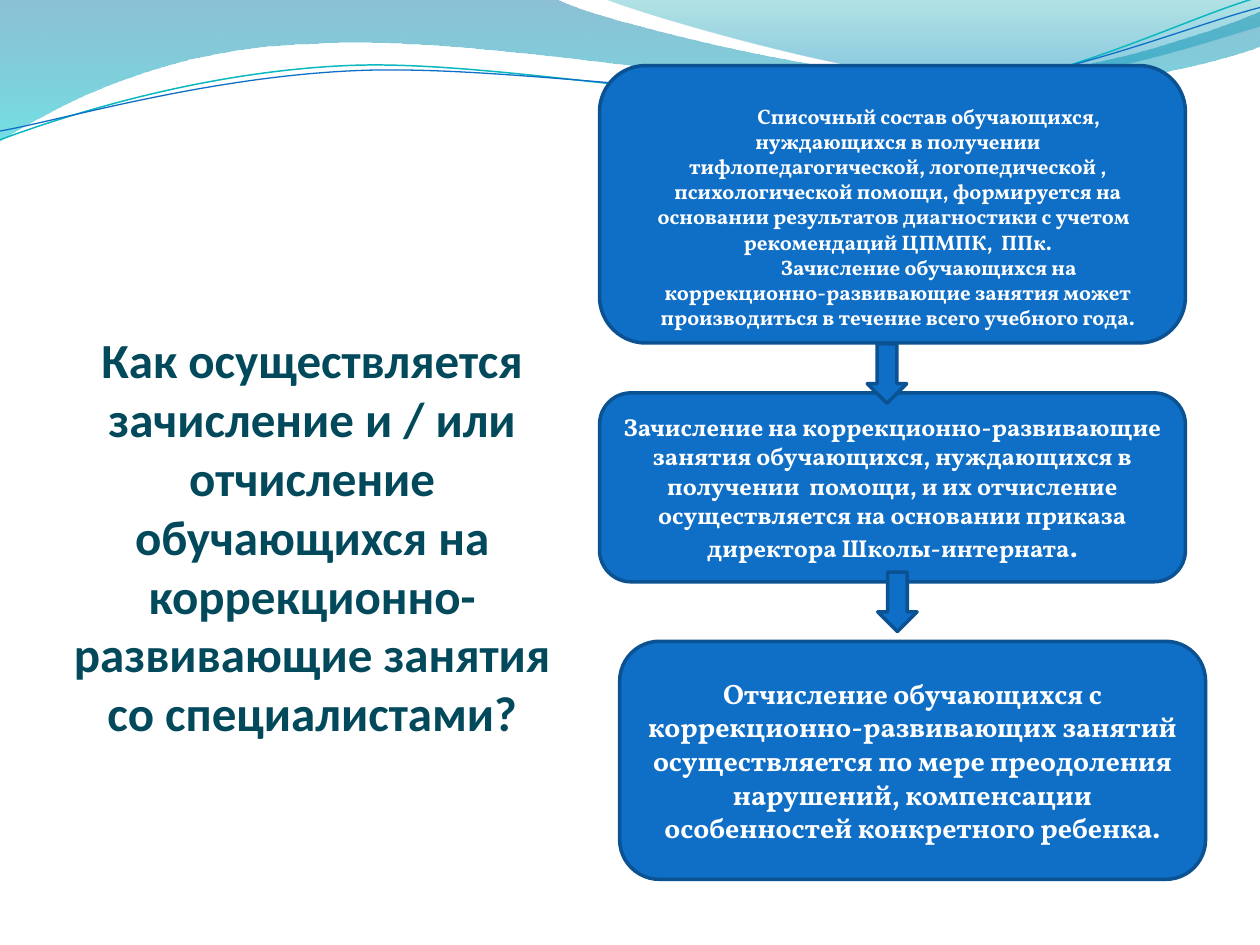
from lxml import etree
from pptx import Presentation
from pptx.dml.color import RGBColor
from pptx.enum.shapes import MSO_SHAPE
from pptx.enum.text import MSO_ANCHOR, MSO_AUTO_SIZE, PP_ALIGN
from pptx.oxml.ns import qn
from pptx.util import Pt

ROUNDED = MSO_SHAPE.ROUNDED_RECTANGLE
DOWN_ARROW = MSO_SHAPE.DOWN_ARROW
CENTER = PP_ALIGN.CENTER
TOP, MIDDLE = MSO_ANCHOR.TOP, MSO_ANCHOR.MIDDLE
NO_AUTOFIT = MSO_AUTO_SIZE.NONE
TITLE_ONLY = 5
LINE_TILT = 357.3

COLORS = {
    "title": "03495C", "white": "FFFFFF", "card": "0F6FC6", "border": "0B5292",
    "aqua": "0AB8BF", "deep": "0074A1", "cyan": "00C6CF",
    "teal": "00A1A9", "sky": "008BBF",
}

# Each path starts at a point; 2 numbers are a line, 6 a cubic curve.
# Gradient stops are (position, colour, opacity percent).
WAVES = [
    ([(0, 0), (317, -1), (343, 12, 478, 45, 546, 45), (614, 45, 690, 19, 720, 6.5),
      (721, 26), (708, 32, 626, 55, 537, 54), (448, 54, 275, 20, 185, 24.5),
      (93, 26, 33, 60, -1, 81), (0, 0)],
     [(0, "deep", 45), (1, "cyan", 55)]),
    ([(345, -1), (366, 8, 491, 45, 554, 47), (616, 50, 692, 23, 720, 15), (720, 0),
      (345, -1)],
     [(0, "teal", 30), (0.8, "sky", 45)]),
]
WAVE_LINES = [
    ([(-1.4, 62.9), (33.8, 51.7, 114.1, 29.4, 199.8, 29.9),
      (284.8, 30.3, 425.9, 67.3, 512.5, 64.8),
      (599.1, 62.4, 676.5, 25.7, 720.2, 15.6)], "aqua", 0.85),
    ([(-1.1, 57.9), (32.9, 53.7, 118.3, 32.5, 204.1, 33),
      (290.6, 33.4, 428.9, 63.8, 515.5, 61.4),
      (601.4, 59.6, 678.4, 30.1, 721.4, 21.3)], "card", 0.75),
]

QUESTION = ("Как осуществляется зачисление и / или отчисление обучающихся на "
            "коррекционно-развивающие занятия со специалистами?")
LIST_RULES = [
    "Списочный состав обучающихся, нуждающихся в получении тифлопедагогической, "
    "логопедической , психологической помощи, формируется на основании результатов "
    "диагностики с учетом   рекомендаций ЦПМПК,  ППк.",
    "Зачисление обучающихся на коррекционно-развивающие занятия может производиться "
    "в течение всего учебного года.",
]
ORDER_RULE = ("Зачисление на коррекционно-развивающие занятия обучающихся, нуждающихся в "
              "получении  помощи, и их отчисление осуществляется на основании приказа "
              "директора Школы-интерната")
LEAVING_RULE = ("Отчисление обучающихся с коррекционно-развивающих занятий осуществляется "
                "по мере преодоления нарушений, компенсации особенностей конкретного ребенка.")


def rgb(name):
    return RGBColor.from_string(COLORS[name])


def set_values(target, values):
    for name, value in values.items():
        setattr(target, name, value)


def add_outline(slide, segments, closed):
    """Draw all points as lines, then join each curve's three points into one cubic."""
    start, *rest = segments
    points = [(Pt(segment[i]), Pt(segment[i + 1]))
              for segment in rest for i in range(0, len(segment), 2)]
    builder = slide.shapes.build_freeform(Pt(start[0]), Pt(start[1]))
    builder.add_line_segments(points, close=closed)
    shape = builder.convert_to_shape()
    shape.shadow.inherit = False
    lines = iter(list(shape.element.iter(qn("a:lnTo"))))
    for segment in rest:
        steps = [next(lines) for _ in range(len(segment) // 2)]
        if len(steps) == 3:
            curve = etree.Element(qn("a:cubicBezTo"))
            steps[0].addprevious(curve)
            for step in steps:
                curve.append(step[0])
                step.getparent().remove(step)
    return shape


def add_waves(slide):
    for segments, stops in WAVES:
        shape = add_outline(slide, segments, True)
        shape.line.fill.background()
        shape.fill.gradient()
        shape.fill.gradient_angle = 270
        for stop, (position, color, _) in zip(shape.fill.gradient_stops, stops):
            stop.position = position
            stop.color.rgb = rgb(color)
        for element, (_, _, opacity) in zip(shape.element.iter(qn("a:srgbClr")), stops):
            etree.SubElement(element, qn("a:alpha")).set("val", str(opacity * 1000))
    for segments, color, width in WAVE_LINES:
        shape = add_outline(slide, segments, False)
        shape.rotation = LINE_TILT
        shape.fill.background()
        shape.line.color.rgb = rgb(color)
        shape.line.width = Pt(width)


def write(shape, paragraphs, font, color, anchor=MIDDLE, indent=0, top_margin=3.6):
    """Fill a shape with centred bold paragraphs, each a list of (text, size)."""
    frame = shape.text_frame
    set_values(frame, {"word_wrap": True, "auto_size": NO_AUTOFIT,
                       "vertical_anchor": anchor, "margin_top": Pt(top_margin)})
    for index, runs in enumerate(paragraphs):
        paragraph = frame.add_paragraph() if index else frame.paragraphs[0]
        paragraph.alignment = CENTER
        if indent:
            paragraph._p.get_or_add_pPr().set("indent", str(Pt(indent)))
        for text, size in runs:
            run = paragraph.add_run()
            run.text = text
            set_values(run.font, {"name": font, "size": Pt(size), "bold": True})
            run.font.color.rgb = rgb(color)


def add_block(slide, kind, left, top, width, height):
    shape = slide.shapes.add_shape(kind, Pt(left), Pt(top), Pt(width), Pt(height))
    shape.shadow.inherit = False
    shape.fill.solid()
    shape.fill.fore_color.rgb = rgb("card")
    shape.line.color.rgb = rgb("border")
    shape.line.width = Pt(2)
    return shape


def add_question(slide, left, top, width, height):
    title = slide.shapes.title
    set_values(title, {"left": Pt(left), "top": Pt(top),
                       "width": Pt(width), "height": Pt(height)})
    write(title, [[(QUESTION, 28)]], "Calibri", "title", TOP)


def add_steps(slide, left, top, width):
    """Stack three cards joined by block arrows."""
    leaving = add_block(slide, ROUNDED, left + 11.5, top + 329, width, 136)
    write(leaving, [[(LEAVING_RULE, 16)]], "Vollkorn", "white")
    order = add_block(slide, ROUNDED, left, top + 187, width, 108)
    write(order, [[(ORDER_RULE, 14), (".", 16)]], "Vollkorn", "white")
    add_block(slide, DOWN_ARROW, left + 159, top + 289.4, 22.5, 34)
    add_block(slide, ROUNDED, left, top, width, 158.5)
    add_block(slide, DOWN_ARROW, left + 153, top + 159, 22.5, 34)
    rules = slide.shapes.add_textbox(Pt(left + 23), Pt(top + 2.8), Pt(295), Pt(152.5))
    write(rules, [[(text, 12)] for text in LIST_RULES], "Vollkorn", "white",
          indent=35.3, top_margin=18)


def main():
    presentation = Presentation()
    set_values(presentation, {"slide_width": Pt(720), "slide_height": Pt(540)})
    slide = presentation.slides.add_slide(presentation.slide_layouts[TITLE_ONLY])
    add_waves(slide)
    add_question(slide, 31.1, 184.8, 294.5, 245)
    add_steps(slide, 342.6, 37.5, 334.8)
    presentation.save("out.pptx")


if __name__ == "__main__":
    main()
